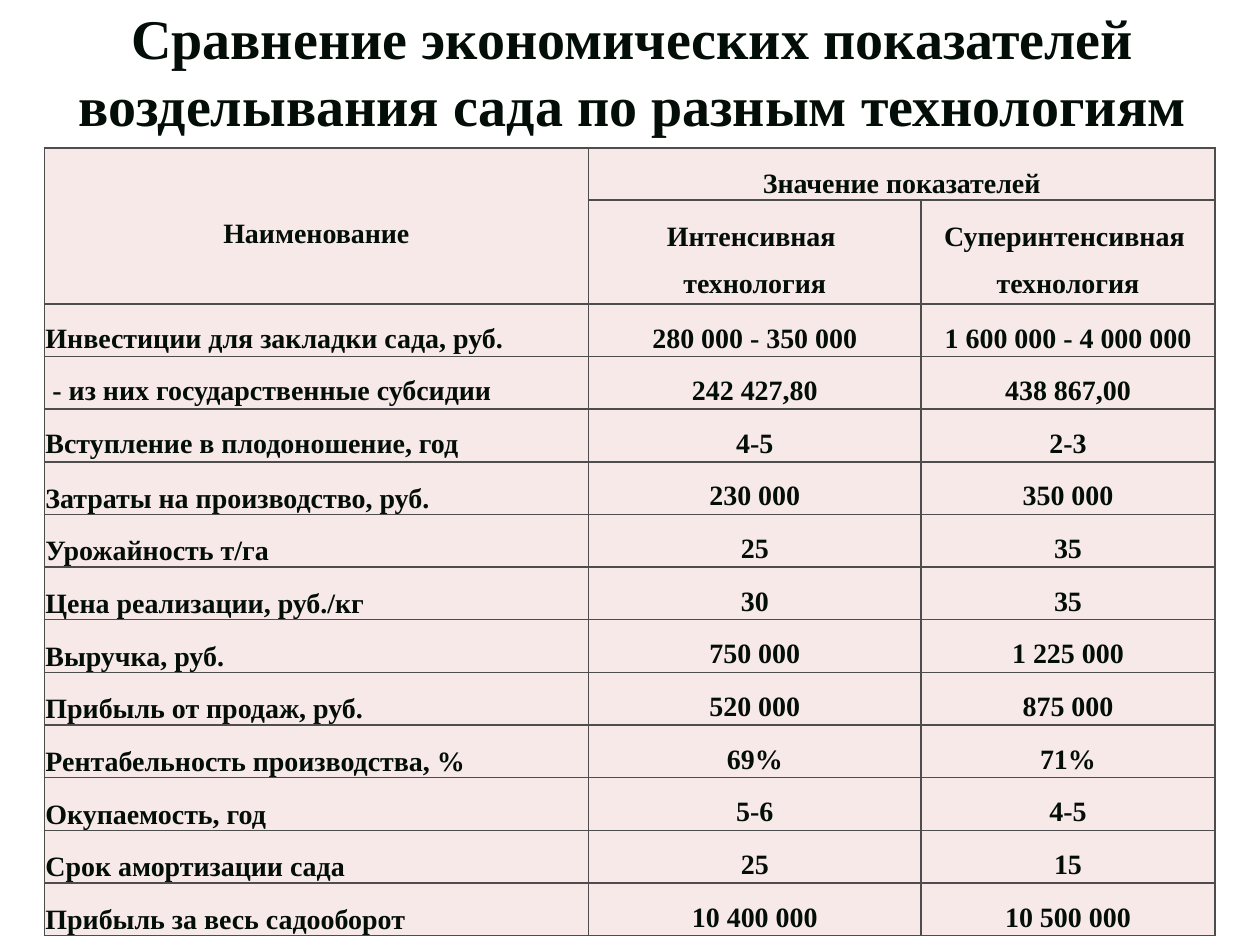
from dataclasses import dataclass

import lxml.etree
import pptx
import pptx.dml.color
import pptx.enum.text
import pptx.oxml.ns
import pptx.util

Pt = pptx.util.Pt
RGB = pptx.dml.color.RGBColor
Align = pptx.enum.text.PP_ALIGN
Anchor = pptx.enum.text.MSO_ANCHOR


@dataclass(frozen=True)
class Theme:
    font: str = "Times New Roman"
    ink: str = "040E08"
    cell_fill: str = "F7E9E7"
    border: str = "4D4D4D"
    title_size: int = 32
    table_size: int = 16


theme = Theme()


def write(frame, text, size, paragraph_format):
    """Put one bold paragraph into a text frame."""
    frame.word_wrap = True
    para = frame.paragraphs[0]
    para.text = text
    for name, value in paragraph_format.items():
        setattr(para, name, value)
    for name, value in {"name": theme.font, "size": Pt(size), "bold": True}.items():
        for span in para.runs:
            setattr(span.font, name, value)
    for span in para.runs:
        span.font.color.rgb = RGB.from_string(theme.ink)


def add_borders(cell):
    properties = cell._tc.get_or_add_tcPr()
    for side in ("a:lnL", "a:lnR", "a:lnT", "a:lnB"):
        line = lxml.etree.SubElement(properties, pptx.oxml.ns.qn(side), w=str(Pt(1)))
        fill = lxml.etree.SubElement(line, pptx.oxml.ns.qn("a:solidFill"))
        lxml.etree.SubElement(fill, pptx.oxml.ns.qn("a:srgbClr"), val=theme.border)


deck = pptx.Presentation()
deck.slide_width, deck.slide_height = Pt(720), Pt(540)
page = deck.slides.add_slide(deck.slide_layouts[6])

# Title
title = page.shapes.add_textbox(Pt(3), Pt(-1.5), Pt(717), Pt(85))
write(
    title.text_frame,
    "Сравнение экономических показателей возделывания сада по разным технологиям",
    theme.title_size,
    {"alignment": Align.CENTER},
)

# Table of indicators
rows = [
    ("Наименование", "Значение показателей", ""),
    ("", "Интенсивная \vтехнология", "Суперинтенсивная \vтехнология"),
    ("Инвестиции для закладки сада, руб.", "280 000 - 350 000", "1 600 000 - 4 000 000"),
    (" - из них государственные субсидии", "242 427,80", "438 867,00"),
    ("Вступление в плодоношение, год", "4-5", "2-3"),
    ("Затраты на производство, руб.", "230 000", "350 000"),
    ("Урожайность т/га", "25", "35"),
    ("Цена реализации, руб./кг", "30", "35"),
    ("Выручка, руб.", "750 000", "1 225 000"),
    ("Прибыль от продаж, руб.", "520 000", "875 000"),
    ("Рентабельность производства, %", "69%", "71%"),
    ("Окупаемость, год", "5-6", "4-5"),
    ("Срок амортизации сада", "25", "15"),
    ("Прибыль за весь садооборот", "10 400 000", "10 500 000"),
]
header_rows = 2
first_bottom_row = 5
column_widths = [311, 190, 168]
row_heights = [24.5, 59.5] + [30.1] * (len(rows) - header_rows)

table = page.shapes.add_table(
    len(rows), len(column_widths), Pt(25.3), Pt(84.7),
    Pt(sum(column_widths)), Pt(sum(row_heights)),
).table
table.first_row = table.horz_banding = False
for column, width in zip(table.columns, column_widths):
    column.width = Pt(width)
for row, height in zip(table.rows, row_heights):
    row.height = Pt(height)
table.cell(0, 0).merge(table.cell(1, 0))
table.cell(0, 1).merge(table.cell(0, 2))

for row_index, row in enumerate(rows):
    for column_index, text in enumerate(row):
        cell = table.cell(row_index, column_index)
        is_label = column_index == 0 and row_index >= header_rows
        at_bottom = (row_index, column_index) == (0, 1) or (
            column_index == 0 and row_index >= first_bottom_row
        )
        cell_format = {
            "margin_left": Pt(0.7),
            "margin_right": Pt(0.7),
            "margin_top": Pt(0.7),
            "margin_bottom": Pt(0),
            "vertical_anchor": Anchor.BOTTOM if at_bottom else Anchor.MIDDLE,
        }
        for name, value in cell_format.items():
            setattr(cell, name, value)
        add_borders(cell)
        cell.fill.solid()
        cell.fill.fore_color.rgb = RGB.from_string(theme.cell_fill)
        if text:
            write(cell.text_frame, text, theme.table_size, {
                "alignment": Align.JUSTIFY if is_label else Align.CENTER,
                "line_spacing": 1.5,
            })

deck.save("out.pptx")
